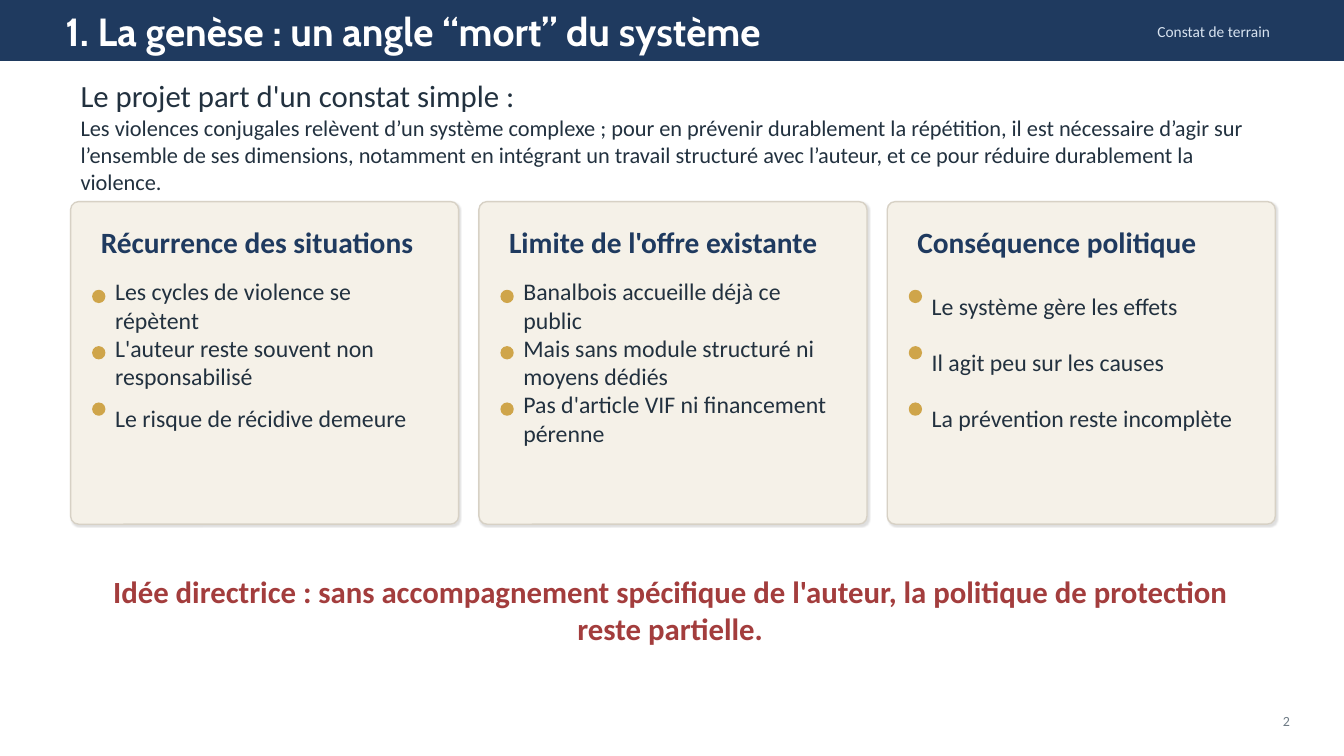
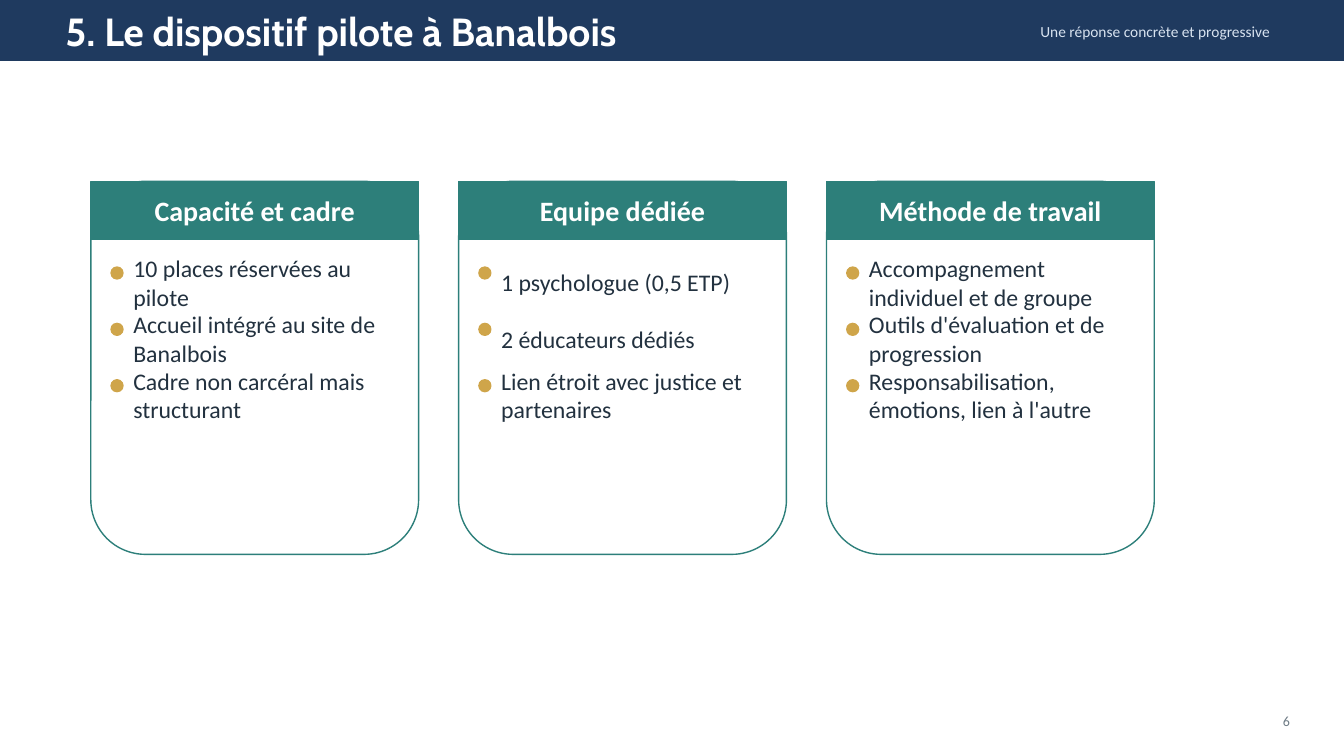
"""Build two slides on the pilot scheme: its origin and its set-up."""
from dataclasses import dataclass

from lxml import etree
from pptx import Presentation
from pptx.dml.color import RGBColor
from pptx.enum.shapes import MSO_SHAPE
from pptx.enum.text import MSO_ANCHOR, PP_ALIGN
from pptx.oxml.ns import qn
from pptx.util import Cm, Pt

RECT = MSO_SHAPE.RECTANGLE
ROUND = MSO_SHAPE.ROUNDED_RECTANGLE
OVAL = MSO_SHAPE.OVAL
MIDDLE = MSO_ANCHOR.MIDDLE
LEFT, CENTER, RIGHT = PP_ALIGN.LEFT, PP_ALIGN.CENTER, PP_ALIGN.RIGHT


@dataclass(frozen=True)
class Style:
    """Hold the font, size, colour and weight of a run."""
    size: float
    color: str
    bold: bool = False
    font: str = "Calibri"


@dataclass(frozen=True)
class Theme:
    """Keep the colours and type styles of the deck."""
    navy: str = "1F3A5F"
    teal: str = "2D7F7A"
    gold: str = "CFA54A"
    cream: str = "F5F1E8"
    sand: str = "D7D1C5"
    white: str = "FFFFFF"
    title: Style = Style(28, "FFFFFF", True, "Cabin")
    tag: Style = Style(11, "D8E3F0")
    lead: Style = Style(22, "22313F")
    body: Style = Style(16, "22313F")
    item: Style = Style(17, "22313F")
    card: Style = Style(21, "1F3A5F", True)
    panel: Style = Style(20, "FFFFFF", True)
    idea: Style = Style(22, "A33D3D", True)
    page: Style = Style(10, "6E7B85")


T = Theme()
WIDTH, HEIGHT = 33.87, 19.05
DOT, PITCH = 0.3, 1.42

INTRO = [
    ("Le projet part d'un constat simple :", T.lead),
    ("Les violences conjugales relèvent d’un système complexe ; pour en "
     "prévenir durablement la répétition, il est nécessaire d’agir sur "
     "l’ensemble de ses dimensions, notamment en intégrant un travail "
     "structuré avec l’auteur, et ce pour réduire durablement la violence.",
     T.body),
]
IDEA = ("Idée directrice : sans accompagnement spécifique de l'auteur, "
        "la politique de protection reste partielle.")
CARDS = {
    "Récurrence des situations": [
        "Les cycles de violence se répètent",
        "L'auteur reste souvent non responsabilisé",
        "Le risque de récidive demeure"],
    "Limite de l'offre existante": [
        "Banalbois accueille déjà ce public",
        "Mais sans module structuré ni moyens dédiés",
        "Pas d'article VIF ni financement pérenne"],
    "Conséquence politique": [
        "Le système gère les effets",
        "Il agit peu sur les causes",
        "La prévention reste incomplète"],
}
PANELS = {
    "Capacité et cadre": [
        "10 places réservées au pilote",
        "Accueil intégré au site de Banalbois",
        "Cadre non carcéral mais structurant"],
    "Equipe dédiée": [
        "1 psychologue (0,5 ETP)",
        "2 éducateurs dédiés",
        "Lien étroit avec justice et partenaires"],
    "Méthode de travail": [
        "Accompagnement individuel et de groupe",
        "Outils d'évaluation et de progression",
        "Responsabilisation, émotions, lien à l'autre"],
}


def write(frame, lines, align=LEFT):
    """Fill a text frame with one paragraph for each (text, style) pair."""
    frame.word_wrap = True
    frame.vertical_anchor = MIDDLE
    for i, (text, style) in enumerate(lines):
        para = frame.add_paragraph() if i else frame.paragraphs[0]
        para.alignment = align
        run = para.add_run()
        run.text = text
        font = run.font
        font.name, font.size, font.bold = style.font, Pt(style.size), style.bold
        font.color.rgb = RGBColor.from_string(style.color)


def label(slide, box, lines, align=LEFT, inset=True):
    """Add a text box, with or without inner margins."""
    frame = slide.shapes.add_textbox(*map(Cm, box)).text_frame
    if not inset:
        frame.margin_left = frame.margin_right = 0
        frame.margin_top = frame.margin_bottom = 0
    write(frame, lines, align)


def block(slide, kind, box, fill, line=None):
    """Add a flat filled shape with a thin outline."""
    shape = slide.shapes.add_shape(kind, *map(Cm, box))
    shape.shadow.inherit = False
    shape.fill.solid()
    shape.fill.fore_color.rgb = RGBColor.from_string(fill)
    shape.line.color.rgb = RGBColor.from_string(line or fill)
    shape.line.width = Pt(1)
    return shape


def shade(shape):
    """Give a shape a faint shadow towards the lower right."""
    effects = shape.element.spPr.find(qn("a:effectLst"))
    outer = etree.SubElement(effects, qn("a:outerShdw"), blurRad=str(Pt(1)),
                             dist=str(Pt(1)), dir="2700000", algn="bl",
                             rotWithShape="0")
    color = etree.SubElement(outer, qn("a:srgbClr"), val="000000")
    etree.SubElement(color, qn("a:alpha"), val="12000")


def bullets(slide, left, top, width, items):
    """Set items on an even pitch, each beside a gold dot."""
    for i, text in enumerate(items):
        y = top + i * PITCH
        block(slide, OVAL, (left, y, DOT, DOT), T.gold)
        label(slide, (left + 0.56, y - 0.25, width, 1.27),
              [(text, T.item)], inset=False)


def card(slide, left, title, items):
    """Draw a cream card with a title and bullets."""
    top = 5.08
    shape = block(slide, ROUND, (left, top, 9.78, 8.13), T.cream, T.sand)
    shape.adjustments[0] = 0.025
    shade(shape)
    label(slide, (left + 0.51, top + 0.51, 8.64, 1.02), [(title, T.card)])
    bullets(slide, left + 0.56, top + 2.24, 7.82, items)


def panel(slide, left, title, items):
    """Draw a teal outlined panel with a header and bullets."""
    top, width = 4.57, 8.26
    block(slide, ROUND, (left, top, width, 9.4), T.white, T.teal)
    head = block(slide, RECT, (left, top, width, 1.47), T.teal)
    write(head.text_frame, [(title, T.panel)], CENTER)
    bullets(slide, left + 0.51, top + 2.16, 6.55, items)


def spread(slide, draw, groups, left, step):
    """Draw one column for each group at equal steps."""
    for i, (title, items) in enumerate(groups.items()):
        draw(slide, left + i * step, title, items)


def start(deck, title, tag, page):
    """Add a slide with the shared band, title, tag and page number."""
    slide = deck.slides.add_slide(deck.slide_layouts[6])
    block(slide, RECT, (0, 0, WIDTH, 1.52), T.navy)
    label(slide, (1.4, 0.46, 21.59, 0.66), [(title, T.title)])
    label(slide, (23.37, 0.51, 8.89, 0.56), [(tag, T.tag)], RIGHT)
    label(slide, (32, 17.91, 0.76, 0.51), [(page, T.page)], RIGHT)
    return slide


def main():
    """Build and save the deck."""
    deck = Presentation()
    deck.slide_width, deck.slide_height = Cm(WIDTH), Cm(HEIGHT)

    slide = start(deck, "1. La genèse : un angle “mort” du système",
                  "Constat de terrain", "2")
    label(slide, (1.78, 2.41, 30.48, 2.03), INTRO)
    spread(slide, card, CARDS, 1.78, 10.29)
    label(slide, (2.03, 14.73, 29.72, 1.27), [(IDEA, T.idea)], CENTER)

    slide = start(deck, "5. Le dispositif pilote à Banalbois",
                  "Une réponse concrète et progressive", "6")
    spread(slide, panel, PANELS, 2.29, 9.27)

    deck.save("out.pptx")


if __name__ == "__main__":
    main()
